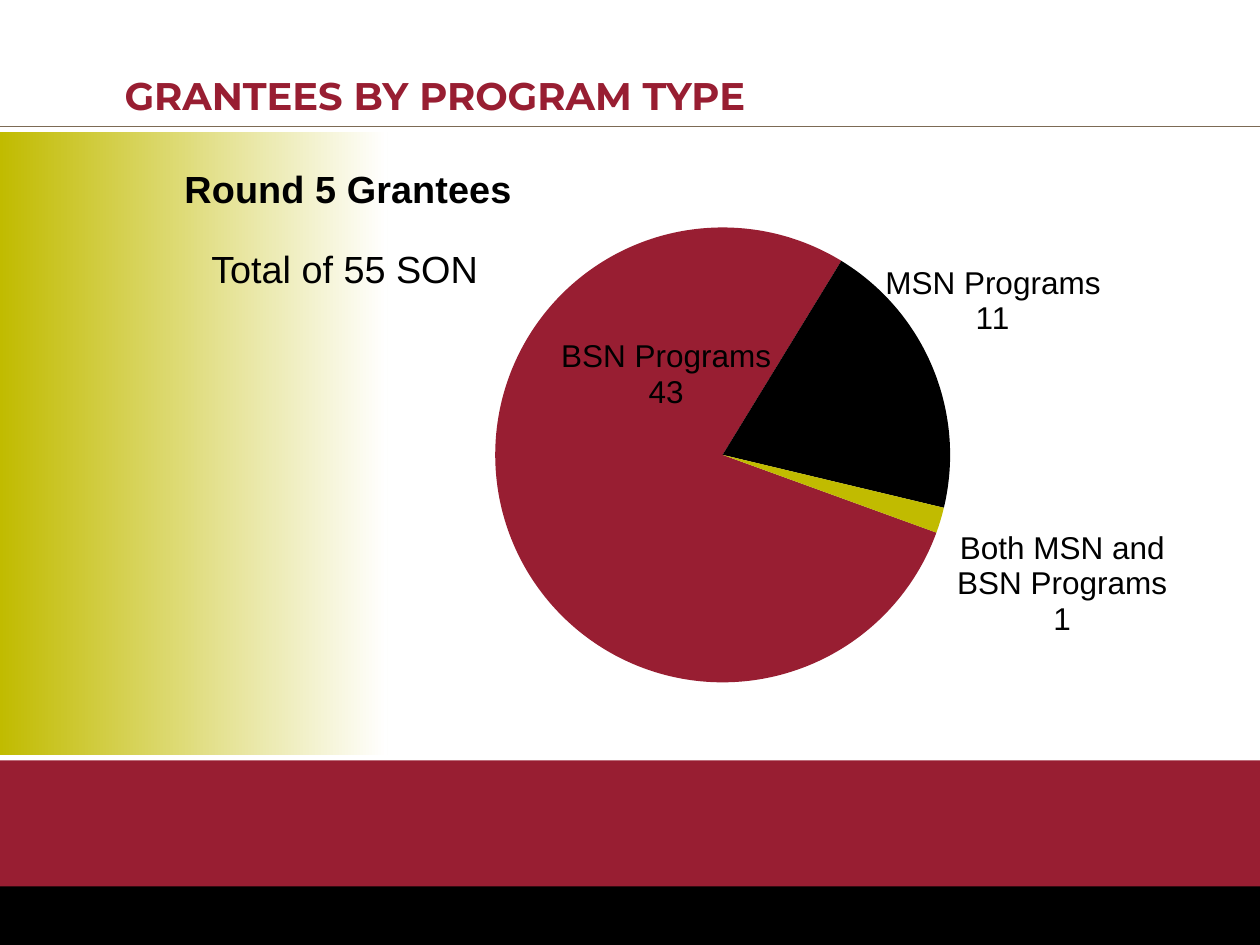
from dataclasses import dataclass
from typing import Optional

from lxml import etree
from pptx import Presentation
from pptx.chart.data import CategoryChartData
from pptx.dml.color import RGBColor
from pptx.enum.chart import XL_CHART_TYPE, XL_LABEL_POSITION
from pptx.enum.shapes import MSO_CONNECTOR, MSO_SHAPE
from pptx.enum.text import MSO_ANCHOR, PP_ALIGN
from pptx.oxml.ns import qn
from pptx.util import Pt

PIE = XL_CHART_TYPE.PIE
BEST_FIT = XL_LABEL_POSITION.BEST_FIT
STRAIGHT = MSO_CONNECTOR.STRAIGHT
RECTANGLE = MSO_SHAPE.RECTANGLE
BOTTOM, MIDDLE = MSO_ANCHOR.BOTTOM, MSO_ANCHOR.MIDDLE
LEFT, CENTER = PP_ALIGN.LEFT, PP_ALIGN.CENTER

COLORS = {"crimson": "981E32", "black": "000000", "olive": "C1BB00",
          "white": "FFFFFF", "brown": "7C6A55"}
SLIDE_WIDTH, SLIDE_HEIGHT = 720, 540
CHART_LEFT, CHART_TOP, CHART_WIDTH, CHART_HEIGHT = 12, 78, 684, 342
RULE_TOP = 72.5
FIRST_SLICE_ANGLE = 110
HEADING_SIZE, LABEL_SIZE = 21.6, 18


@dataclass
class Band:
    top: float
    width: float
    height: float
    color: str
    fade_to: Optional[str] = None


@dataclass
class Slice:
    category: str
    count: int
    color: str
    offset: tuple[float, float]


BANDS = [
    Band(75.5, 221.5, 356, "olive", "white"),
    Band(434.5, SLIDE_WIDTH, 72.5, "crimson"),
    Band(506.5, SLIDE_WIDTH, 33.5, "black"),
]
SLICES = [
    Slice("BSN Programs", 43, "crimson", (154.5, -110.5)),
    Slice("MSN Programs", 11, "black", (-31, -16.5)),
    Slice("Both MSN and BSN Programs", 1, "olive", (5.5, 4.5)),
]


def rgb(name: str) -> RGBColor:
    return RGBColor.from_string(COLORS[name])


def format_font(font, color: str, **values) -> None:
    for name, value in values.items():
        setattr(font, name, value)
    font.color.rgb = rgb(color)


def draw_band(slide, band: Band) -> None:
    shape = slide.shapes.add_shape(
        RECTANGLE, 0, Pt(band.top), Pt(band.width), Pt(band.height))
    shape.shadow.inherit = False
    shape.line.fill.background()
    if band.fade_to:
        shape.fill.gradient()
        shape.fill.gradient_angle = 0
        stops = zip(shape.fill.gradient_stops, (band.color, band.fade_to), (0, 1))
        for stop, color, position in stops:
            stop.color.rgb = rgb(color)
            stop.position = position
    else:
        shape.fill.solid()
        shape.fill.fore_color.rgb = rgb(band.color)


def draw_rule(slide) -> None:
    rule = slide.shapes.add_connector(
        STRAIGHT, 0, Pt(RULE_TOP), Pt(SLIDE_WIDTH), Pt(RULE_TOP))
    rule.line.color.rgb = rgb("brown")
    rule.line.width = Pt(0.5)
    properties = rule._element.find(qn("p:spPr"))
    etree.SubElement(properties, qn("a:effectLst"))


def write_title(slide) -> None:
    title = slide.shapes.title
    box = {"left": 64, "top": 18, "width": 464, "height": 53}
    for name, value in box.items():
        setattr(title, name, Pt(value))
    title.text_frame.vertical_anchor = BOTTOM
    title.text_frame.text = "GRANTEES BY PROGRAM TYPE"
    paragraph = title.text_frame.paragraphs[0]
    paragraph.alignment = LEFT
    paragraph.line_spacing = 0.8
    format_font(paragraph.runs[0].font, "crimson",
                name="Montserrat", size=Pt(22), bold=True)


def write_total(slide) -> None:
    box = slide.shapes.add_textbox(Pt(97), Pt(136), Pt(200), Pt(35))
    frame = box.text_frame
    frame.word_wrap = True
    frame.vertical_anchor = MIDDLE
    frame.text = "Total of 55 SON"
    paragraph = frame.paragraphs[0]
    paragraph.alignment = CENTER
    format_font(paragraph.runs[0].font, "black",
                name="Arial", size=Pt(HEADING_SIZE))


def set_layout(parent, index: int, modes: dict[str, str],
               **lengths: float) -> None:
    """Place a chart element by lengths in points, as its child at index."""
    for old in parent.findall(qn("c:layout")):
        parent.remove(old)
    layout = etree.Element(qn("c:layout"))
    manual = etree.SubElement(layout, qn("c:manualLayout"))
    for name, mode in modes.items():
        etree.SubElement(manual, qn(f"c:{name}"), val=mode)
    for name, length in lengths.items():
        whole = CHART_WIDTH if name in "xw" else CHART_HEIGHT
        etree.SubElement(manual, qn(f"c:{name}"), val=str(length / whole))
    parent.insert(index, layout)


def set_last_child(parent, tag: str, value: str) -> None:
    for old in parent.findall(qn(tag)):
        parent.remove(old)
    etree.SubElement(parent, qn(tag), val=value)


def write_chart_title(chart) -> None:
    frame = chart.chart_title.text_frame
    frame.text = "Round 5 Grantees"
    format_font(frame.paragraphs[0].runs[0].font, "black",
                size=Pt(HEADING_SIZE), bold=True)
    set_layout(chart.element.xpath("c:chart/c:title")[0], 1,
               {"xMode": "edge", "yMode": "edge"}, x=89.5, y=12)


def format_slices(chart) -> None:
    series = chart.plots[0].series[0]
    labels = series.data_labels
    labels.show_value = labels.show_category_name = True
    format_font(labels.font, "black", size=Pt(LABEL_SIZE), bold=True)
    for index, part in enumerate(SLICES):
        point = series.points[index]
        point.format.fill.solid()
        point.format.fill.fore_color.rgb = rgb(part.color)
        frame = point.data_label.text_frame
        frame.text = f"{part.category}\n{part.count}"
        frame.word_wrap = True
        for paragraph in frame.paragraphs:
            format_font(paragraph.runs[0].font, "black",
                        size=Pt(LABEL_SIZE), bold=False)
        point.data_label.position = BEST_FIT
    for element, part in zip(chart.element.xpath(".//c:dLbl"), SLICES):
        x, y = part.offset
        set_layout(element, 1, {}, x=x, y=y)
    set_last_child(chart.element.xpath(".//c:ser/c:dLbls")[0],
                   "c:showLeaderLines", "0")


def draw_pie(slide) -> None:
    data = CategoryChartData()
    data.categories = [part.category for part in SLICES]
    data.add_series("Series 1", [part.count for part in SLICES])
    chart = slide.shapes.add_chart(
        PIE, Pt(CHART_LEFT), Pt(CHART_TOP), Pt(CHART_WIDTH), Pt(CHART_HEIGHT),
        data).chart
    chart.has_legend = False
    chart.plots[0].vary_by_categories = False
    format_font(chart.font, "brown", name="Arial", size=Pt(LABEL_SIZE))
    write_chart_title(chart)
    format_slices(chart)

    # Plot area and rotation of the first slice
    set_layout(chart.element.xpath("c:chart/c:plotArea")[0], 0,
               {"layoutTarget": "inner", "xMode": "edge", "yMode": "edge"},
               x=264, y=52, w=274, h=260)
    set_last_child(chart.element.xpath(".//c:pieChart")[0],
                   "c:firstSliceAng", str(FIRST_SLICE_ANGLE))


def main() -> None:
    presentation = Presentation()
    presentation.slide_width = Pt(SLIDE_WIDTH)
    presentation.slide_height = Pt(SLIDE_HEIGHT)
    slide = presentation.slides.add_slide(presentation.slide_layouts[5])

    # Background bands and the rule under the title
    for band in BANDS:
        draw_band(slide, band)
    draw_rule(slide)

    # Content
    write_title(slide)
    draw_pie(slide)
    write_total(slide)
    presentation.save("out.pptx")


if __name__ == "__main__":
    main()
